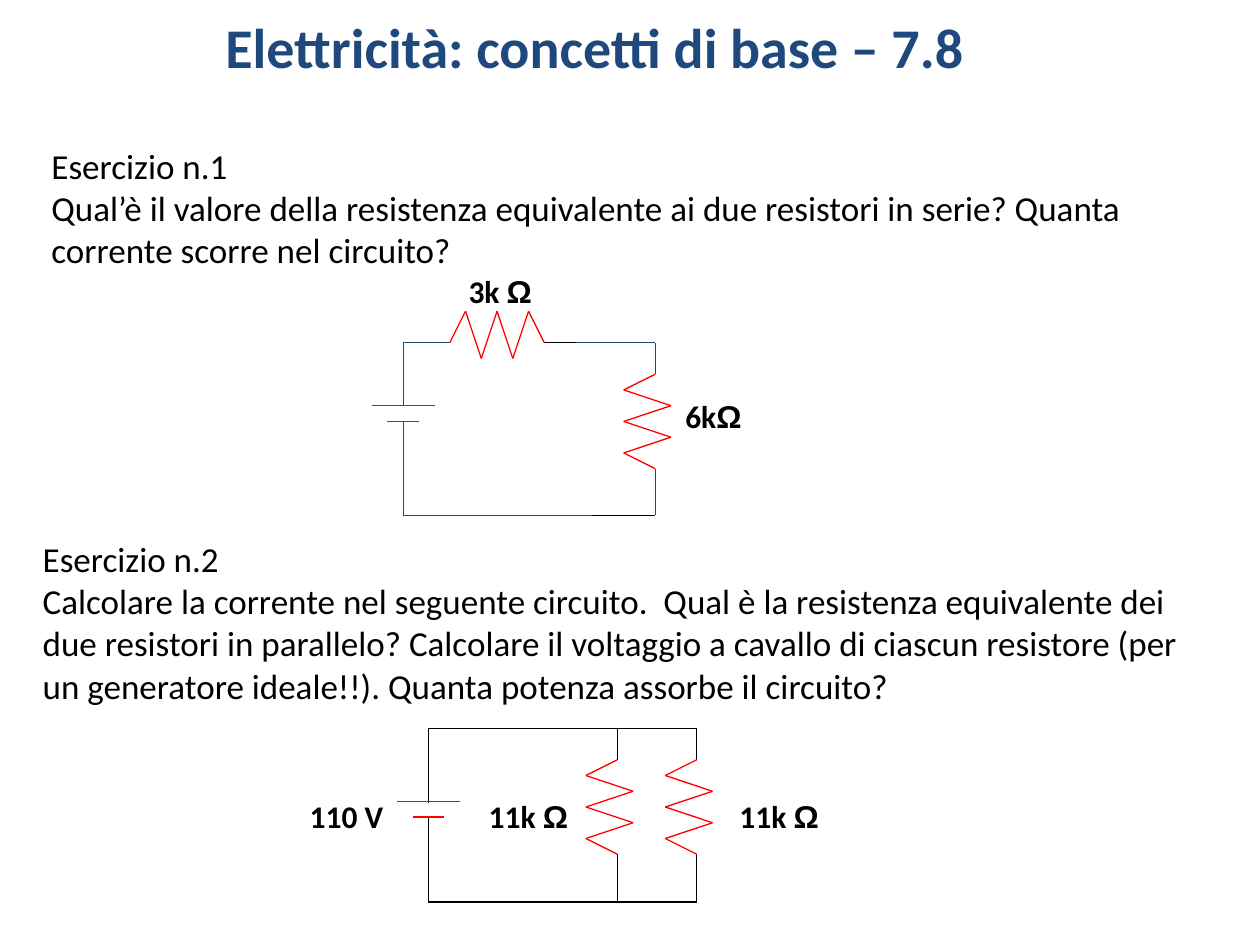
import itertools

import pptx
import pptx.dml.color
import pptx.enum.shapes
import pptx.oxml
import pptx.util
from pptx.util import Inches

BLACK, NAVY, RED = "000000", "1F497D", "FF0000"

TITLE = "Elettricità: concetti di base – 7.8"
# (box, paragraphs)
EXERCISES = [
    ((0.31, 1.1, 9.69, 1.11), [
        "Esercizio n.1",
        "Qual’è il valore della resistenza equivalente ai due resistori in serie? "
        "Quanta corrente scorre nel circuito?",
    ]),
    ((0.24, 4.22, 9.25, 1.45), [
        "Esercizio n.2",
        "Calcolare la corrente nel seguente circuito.  Qual è la resistenza equivalente "
        "dei due resistori in parallelo? Calcolare il voltaggio a cavallo di ciascun "
        "resistore (per un generatore ideale!!). Quanta potenza assorbe il circuito?",
    ]),
]

# wires: (colour, points); resistors: (start x, start y, horizontal);
# battery: centre x, top plate y; labels: (left, top, text)
CIRCUITS = [
    {
        "wires": [
            (NAVY, [(3.57, 2.72), (3.2, 2.72), (3.2, 3.22)]),
            (NAVY, [(3.2, 3.34), (3.2, 4.09), (4.7, 4.09)]),
            (BLACK, [(4.7, 4.09), (5.2, 4.09)]),
            (NAVY, [(5.2, 4.09), (5.2, 3.72)]),
            (NAVY, [(5.2, 2.97), (5.2, 2.72), (4.57, 2.72)]),
            (BLACK, [(4.57, 2.72), (4.32, 2.72)]),
        ],
        "resistors": [(3.57, 2.72, True), (5.2, 2.97, False)],
        "battery": (3.2, 3.22),
        "labels": [(3.62, 2.11, "3k Ω"), (5.34, 3.1, "6kΩ")],
    },
    {
        "wires": [
            (BLACK, [(3.4, 6.37), (3.4, 5.78), (4.9, 5.78), (5.53, 5.78), (5.53, 6.03)]),
            (BLACK, [(3.4, 6.49), (3.4, 7.16), (4.9, 7.16), (5.53, 7.16), (5.53, 6.78)]),
            (BLACK, [(4.9, 5.78), (4.9, 6.03)]),
            (BLACK, [(4.9, 7.16), (4.9, 6.78)]),
        ],
        "resistors": [(4.9, 6.03, False), (5.53, 6.03, False)],
        "battery": (3.4, 6.36),
        "labels": [(2.36, 6.28, "110 V"), (3.78, 6.28, "11k Ω"), (5.77, 6.28, "11k Ω")],
    },
]

ZIGZAG_OFFSETS = [0, -0.25, 0.125, -0.25, 0.125, -0.25, 0]
ZIGZAG_STEP = 0.125
PLATE_GAP = 0.125
PLATE_HALF_WIDTHS = [0.25, 0.125]
LABEL_SIZE = (0.88, 0.37)


def rgb(colour):
    return pptx.dml.color.RGBColor.from_string(colour)


def add_text(shapes, box, paragraphs, size=20, colour=BLACK, bold=False, wrap=True):
    """Add a text box in Calibri, with the ohm sign in Arial."""
    frame = shapes.add_textbox(*map(Inches, box)).text_frame
    frame.word_wrap = wrap
    for index, text in enumerate(paragraphs):
        paragraph = frame.paragraphs[0] if index == 0 else frame.add_paragraph()
        for is_ohm, letters in itertools.groupby(text, lambda letter: letter == "Ω"):
            run = paragraph.add_run()
            run.text = "".join(letters)
            run.font.name = "Arial" if is_ohm else "Calibri"
            run.font.size = pptx.util.Pt(size)
            run.font.bold = bold
            run.font.color.rgb = rgb(colour)


def add_polyline(shapes, points, colour):
    """Join consecutive points with straight connectors."""
    for start, end in itertools.pairwise(points):
        line = shapes.add_connector(
            pptx.enum.shapes.MSO_CONNECTOR.STRAIGHT, *map(Inches, start + end))
        line.line.color.rgb = rgb(colour)
        line.line.width = pptx.util.Pt(0.75)
        properties = line._element.spPr
        properties.append(pptx.oxml.parse_xml(
            '<a:effectLst xmlns:a="http://schemas.openxmlformats.org/drawingml/2006/main"/>'))


def add_resistor(shapes, x, y, horizontal):
    points = []
    for index, offset in enumerate(ZIGZAG_OFFSETS):
        along = index * ZIGZAG_STEP
        points.append((x + along, y + offset) if horizontal else (x + offset, y + along))
    add_polyline(shapes, points, RED)


def add_battery(shapes, x, y):
    for index, half in enumerate(PLATE_HALF_WIDTHS):
        plate_y = y + index * PLATE_GAP
        add_polyline(shapes, [(x - half, plate_y), (x + half, plate_y)], RED)


def add_circuit(slide, circuit):
    shapes = slide.shapes.add_group_shape().shapes
    for colour, points in circuit["wires"]:
        add_polyline(shapes, points, colour)
    for resistor in circuit["resistors"]:
        add_resistor(shapes, *resistor)
    add_battery(shapes, *circuit["battery"])
    for left, top, text in circuit["labels"]:
        add_text(shapes, (left, top) + LABEL_SIZE, [text], size=18, bold=True)


def main():
    presentation = pptx.Presentation()
    presentation.slide_width = Inches(10)
    presentation.slide_height = Inches(7.5)
    slide = presentation.slides.add_slide(presentation.slide_layouts[6])
    add_text(slide.shapes, (1.69, 0.05, 7.02, 0.64), [TITLE],
             size=32, colour=NAVY, bold=True, wrap=False)
    for box, paragraphs in EXERCISES:
        add_text(slide.shapes, box, paragraphs)
    for circuit in CIRCUITS:
        add_circuit(slide, circuit)
    presentation.save("out.pptx")


if __name__ == "__main__":
    main()
